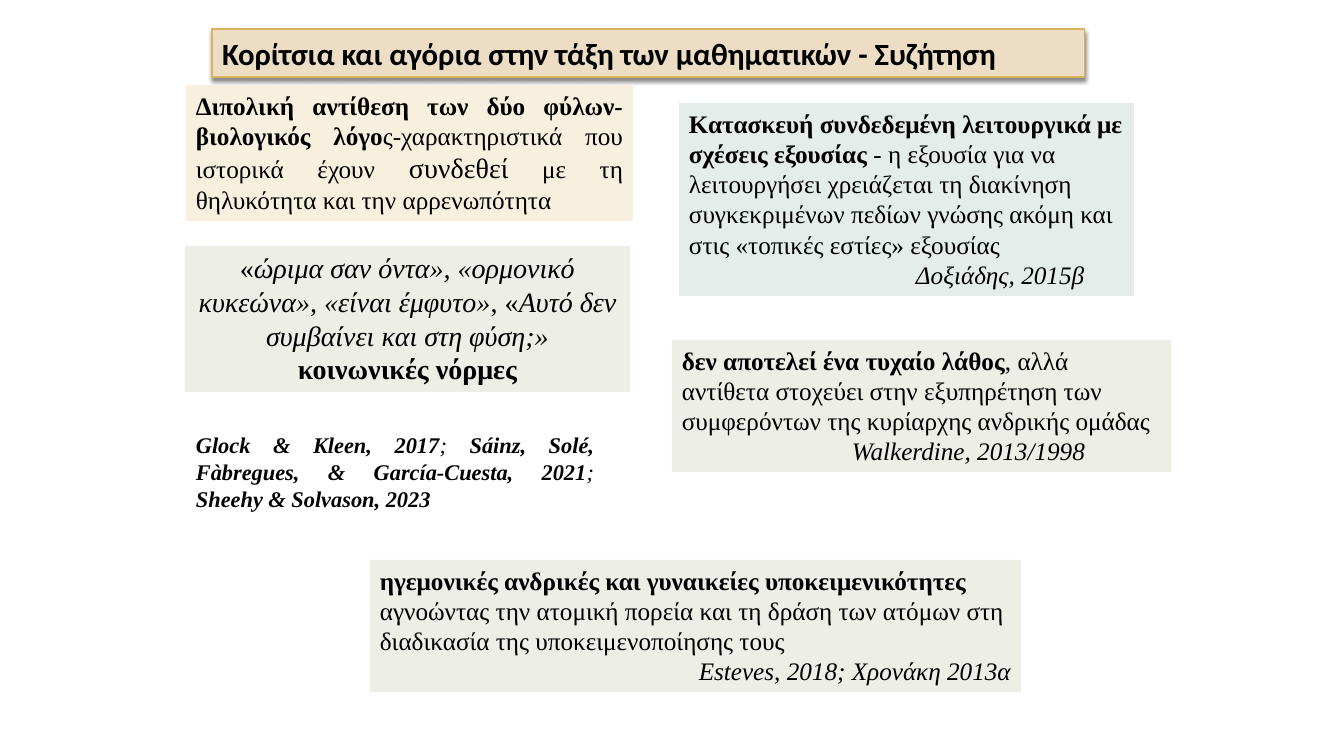
"""Build a slide on girls and boys in the mathematics classroom."""
from lxml.etree import SubElement
from pptx import Presentation
from pptx.dml.color import RGBColor
from pptx.enum.text import MSO_ANCHOR, MSO_AUTO_SIZE, PP_ALIGN
from pptx.oxml.ns import qn
from pptx.util import Pt

SLIDE_SIZE = (1344, 756)
SCALE = 12192000 / 1344
BLACK = RGBColor(0x00, 0x00, 0x00)
TAN = RGBColor(0xED, 0xDD, 0xC4)
GOLD = RGBColor(0xD8, 0xB2, 0x5C)
CREAM = RGBColor(0xF7, 0xF0, 0xDE)
SAGE = RGBColor(0xED, 0xEE, 0xE6)
MINT = RGBColor(0xE5, 0xED, 0xEB)
LEFT, CENTER, RIGHT, JUSTIFY = PP_ALIGN.LEFT, PP_ALIGN.CENTER, PP_ALIGN.RIGHT, PP_ALIGN.JUSTIFY

HEADING = "Κορίτσια και αγόρια στην τάξη των μαθηματικών - Συζήτηση"
HEADING_BOX = (212, 29, 873, 48)

# Each statement: box, fill, size, paragraphs of (alignment, indent, runs of (text, style[, size]))
STATEMENTS = [
    ((186, 85, 447, 136), CREAM, 18, [
        (JUSTIFY, 0, [
            ("Διπολική αντίθεση των δύο φύλων- βιολογικός λόγο", "b"),
            ("ς-χαρακτηριστικά που ιστορικά έχουν ", ""),
            ("συνδεθεί", "", 20),
            (" με τη θηλυκότητα και την αρρενωπότητα", "")])]),
    ((185, 246, 445, 146), SAGE, 20, [
        (CENTER, 0, [
            ("«", ""),
            ("ώριμα σαν όντα», «ορμονικό κυκεώνα», «είναι έμφυτο»", "i"),
            (", «", ""),
            ("Αυτό δεν συμβαίνει και στη φύση;»", "i")]),
        (CENTER, 0, [("κοινωνικές νόρμες", "b")])]),
    ((679, 103, 455, 193), MINT, 18, [
        (LEFT, 0, [
            ("Κατασκευή συνδεδεμένη λειτουργικά με σχέσεις εξουσίας ", "b"),
            ("- η εξουσία για να λειτουργήσει χρειάζεται τη διακίνηση συγκεκριμένων "
             "πεδίων γνώσης ακόμη και στις «τοπικές εστίες» εξουσίας", "")]),
        (LEFT, 227, [("Δοξιάδης, 2015β", "i")])]),
    ((186, 426, 418, 92), None, 16, [
        (JUSTIFY, 0, [
            ("Glock & Kleen, 2017", "bi"),
            ("; ", "i"),
            ("Sáinz, Solé, Fàbregues, & García-Cuesta, 2021", "bi"),
            ("; ", "i"),
            ("Sheehy & Solvason, 2023", "bi")])]),
    ((672, 340, 499, 132), SAGE, 18, [
        (LEFT, 0, [
            ("δεν αποτελεί ένα τυχαίο λάθος", "b"),
            (", αλλά αντίθετα στοχεύει στην εξυπηρέτηση των συμφερόντων "
             "της κυρίαρχης ανδρικής ομάδας", "")]),
        (LEFT, 170, [("Walkerdine, 2013/1998", "i")])]),
    ((370, 560, 651, 132), SAGE, 18, [
        (LEFT, 0, [
            ("ηγεμονικές ανδρικές και γυναικείες υποκειμενικότητες ", "b"),
            ("αγνοώντας την ατομική πορεία και τη δράση των ατόμων στη "
             "διαδικασία της υποκειμενοποίησης τους", "")]),
        (RIGHT, 0, [("Esteves, 2018; Χρονάκη 2013α", "i")])]),
]


def px(length):
    """Turn pixels into EMU."""
    return round(length * SCALE)


def format_run(run, font_name, size, style):
    """Set the font of one run."""
    font = run.font
    font.name, font.size = font_name, Pt(size)
    font.bold, font.italic = "b" in style, "i" in style
    font.color.rgb = BLACK


def add_heading(slide):
    """Fill the title placeholder as a framed bar with a soft shadow."""
    heading = slide.shapes.title
    heading.left, heading.top, heading.width, heading.height = map(px, HEADING_BOX)
    heading.fill.solid()
    heading.fill.fore_color.rgb = TAN
    heading.line.color.rgb = GOLD
    heading.line.width = Pt(0.79)
    effects = SubElement(heading._element.spPr, qn("a:effectLst"))
    shadow = SubElement(effects, qn("a:outerShdw"), blurRad=str(Pt(3)), dist=str(Pt(2.4)),
                        dir="5400000", rotWithShape="0")
    shade = SubElement(shadow, qn("a:srgbClr"), val=str(BLACK))
    SubElement(shade, qn("a:alpha"), val="45000")
    frame = heading.text_frame
    frame.text = HEADING
    frame.auto_size = MSO_AUTO_SIZE.NONE
    frame.vertical_anchor = MSO_ANCHOR.MIDDLE
    frame.paragraphs[0].alignment = LEFT
    format_run(frame.paragraphs[0].runs[0], "Calibri", 22, "b")


def add_statement(slide, box, fill, size, paragraphs):
    """Add one text panel with its paragraphs."""
    panel = slide.shapes.add_textbox(*map(px, box))
    if fill is not None:
        panel.fill.solid()
        panel.fill.fore_color.rgb = fill
    frame = panel.text_frame
    frame.word_wrap = True
    for index, (alignment, indent, runs) in enumerate(paragraphs):
        paragraph = frame.add_paragraph() if index else frame.paragraphs[0]
        paragraph.alignment = alignment
        if indent:
            paragraph._p.get_or_add_pPr().set("marL", str(px(indent)))
        for text, style, *own_size in runs:
            run = paragraph.add_run()
            run.text = text
            format_run(run, "Times New Roman", own_size[0] if own_size else size, style)


def main():
    """Build and save the slide."""
    deck = Presentation()
    deck.slide_width, deck.slide_height = map(px, SLIDE_SIZE)
    slide = deck.slides.add_slide(deck.slide_layouts[5])
    add_heading(slide)
    for statement in STATEMENTS:
        add_statement(slide, *statement)
    deck.save("out.pptx")


if __name__ == "__main__":
    main()
